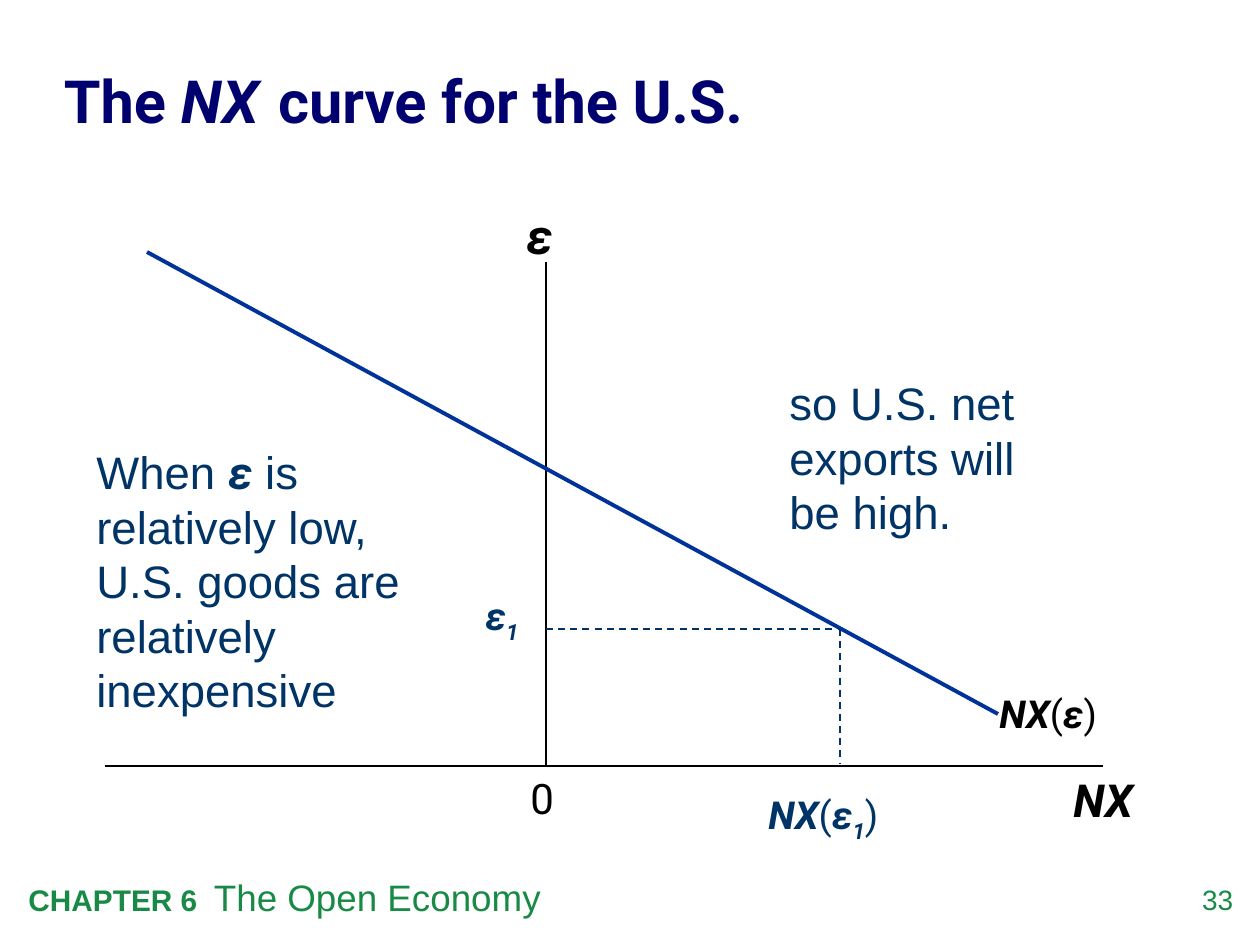
from dataclasses import dataclass

from lxml.etree import SubElement
from pptx import Presentation
from pptx.dml.color import RGBColor
from pptx.enum.dml import MSO_LINE
from pptx.enum.shapes import MSO_CONNECTOR
from pptx.enum.text import MSO_ANCHOR, PP_ALIGN
from pptx.oxml.ns import qn
from pptx.util import Emu, Pt

PX_PER_INCH = 126


@dataclass(frozen=True)
class Theme:
    body: str = "Arial"
    math: str = "Roboto"
    title: str = "00006E"
    footer: str = "198A46"
    axis: str = "000000"
    curve: str = "003399"
    note: str = "003366"
    title_size: int = 34
    title_gap_size: int = 11
    note_size: int = 26
    label_size: int = 22
    origin_size: int = 24
    epsilon_size: int = 28
    chapter_size: int = 17
    footer_size: int = 21
    number_size: int = 16


THEME = Theme()


def px(length):
    return Emu(round(length * 914400 / PX_PER_INCH))


# Kinds of span: (text, font settings, baseline)
def plain(text, name=None, **font):
    return text, {"name": name or THEME.body, **font}, None


def symbol(text, baseline=None):
    return text, {"name": THEME.math, "bold": True, "italic": True}, baseline


def upright(text):
    return plain(text, THEME.math)


def subscript(text):
    return symbol(text, "-25000")


def nx_of(*argument):
    return [symbol("NX"), upright("("), *argument, upright(")")]


def add_text(page, place, spans, size, color, inset=True,
             align=PP_ALIGN.LEFT, anchor=MSO_ANCHOR.TOP, line_spacing=None):
    box = page.shapes.add_textbox(*map(px, place))
    frame = box.text_frame
    frame.word_wrap = True
    frame.vertical_anchor = anchor
    if not inset:
        frame.margin_left = frame.margin_right = 0
        frame.margin_top = frame.margin_bottom = 0
    para = frame.paragraphs[0]
    para.alignment = align
    para.line_spacing = line_spacing
    para.font.size = Pt(size)
    para.font.color.rgb = RGBColor.from_string(color)
    for text, font, baseline in spans:
        for index, line in enumerate(text.split("\n")):
            if index:
                para.add_line_break()
            span = para.add_run()
            span.text = line
            for key, value in font.items():
                setattr(span.font, key, value)
            if baseline:
                span.font._element.set("baseline", baseline)


def add_line(page, start, end, color, width=1, dashed=False):
    line = page.shapes.add_connector(
        MSO_CONNECTOR.STRAIGHT, *map(px, (*start, *end)))
    line.line.color.rgb = RGBColor.from_string(color)
    line.line.width = Pt(width)
    if dashed:
        line.line.dash_style = MSO_LINE.DASH
    SubElement(line._element.spPr, qn("a:effectLst"))


def add_footer(page):
    add_text(page, (16, 869, 1031, 57),
             [plain("CHAPTER 6  ", bold=True, size=Pt(THEME.chapter_size)),
              plain("The Open Economy")],
             THEME.footer_size, THEME.footer)
    add_text(page, (1164, 883, 69, 40), [plain("33")], THEME.number_size,
             THEME.footer, inset=False, align=PP_ALIGN.RIGHT)


def add_title(page):
    bold = {"name": THEME.math, "bold": True}
    add_text(page, (64, 33, 1137, 130),
             [plain("The ", **bold), symbol("NX "),
              plain(" ", size=Pt(THEME.title_gap_size), **bold),
              plain("curve for the U.S.", **bold)],
             THEME.title_size, THEME.title, inset=False,
             anchor=MSO_ANCHOR.MIDDLE, line_spacing=1.05)


def add_diagram(page):
    origin_x, origin_y = 546, 766
    point_x, point_y = 840, 629

    # Axes
    add_line(page, (105, origin_y), (1103, origin_y), THEME.axis)
    add_line(page, (origin_x, 262), (origin_x, origin_y), THEME.axis)
    add_text(page, (518, origin_y, 63, 63), [upright("0")],
             THEME.origin_size, THEME.axis)
    add_text(page, (1061, origin_y, 95, 67), [symbol("NX")],
             THEME.note_size, THEME.axis)
    add_text(page, (514, 199, 63, 72), [symbol("ε")],
             THEME.epsilon_size, THEME.axis)

    # Net export curve
    add_line(page, (147, 252), (998, 714), THEME.curve, width=2.25)
    add_text(page, (987, 684, 158, 59), nx_of(symbol("ε")),
             THEME.label_size, THEME.axis)

    # Point on the curve
    epsilon_one = [symbol("ε"), subscript("1")]
    point = (point_x, point_y)
    add_line(page, (origin_x, point_y), point, THEME.note, dashed=True)
    add_line(page, point, (point_x, origin_y - 2), THEME.note, dashed=True)
    add_text(page, (473, 586, 84, 59), epsilon_one,
             THEME.label_size, THEME.note)
    add_text(page, (756, 785, 189, 59), nx_of(*epsilon_one),
             THEME.label_size, THEME.note)


def add_notes_beside_curve(page):
    add_text(page, (84, 438, 368, 286),
             [plain("When "), symbol("ε"),
              plain(" is relatively low, \n"
                    "U.S. goods are relatively inexpensive")],
             THEME.note_size, THEME.note)
    add_text(page, (777, 369, 284, 178),
             [plain("so U.S. net exports will be high.")],
             THEME.note_size, THEME.note)


def main():
    deck = Presentation()
    deck.slide_width, deck.slide_height = px(1260), px(945)
    page = deck.slides.add_slide(deck.slide_layouts[6])
    add_footer(page)
    add_title(page)
    add_diagram(page)
    add_notes_beside_curve(page)
    deck.save("out.pptx")


if __name__ == "__main__":
    main()
